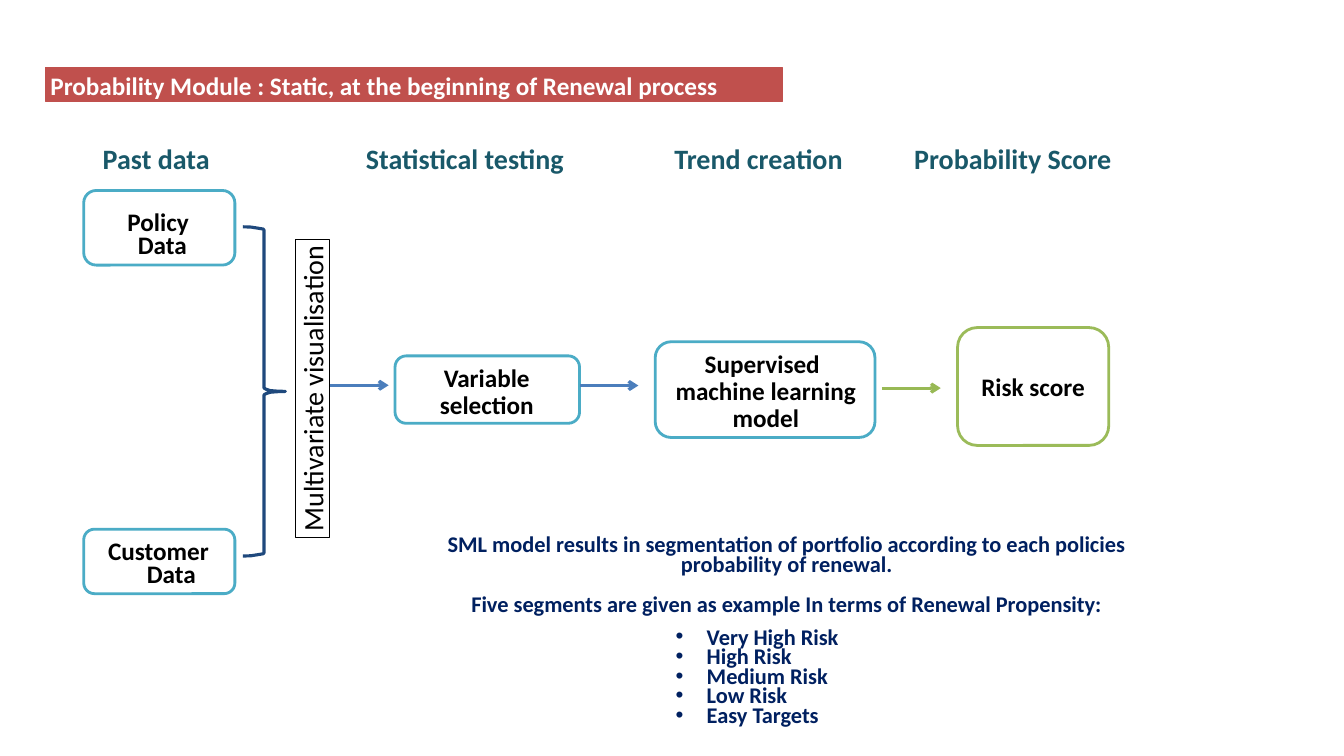
from lxml.etree import SubElement
from pptx import Presentation
from pptx.dml.color import RGBColor
from pptx.enum.shapes import MSO_CONNECTOR as CONNECTOR, MSO_SHAPE as SHAPE
from pptx.enum.text import MSO_ANCHOR as ANCHOR, MSO_AUTO_SIZE as AUTO_SIZE, PP_ALIGN as ALIGN
from pptx.oxml.ns import qn
from pptx.util import Pt

TEAL, BLACK, NAVY, RED, WHITE = "195869", "000000", "002060", "C0504D", "FFFFFF"
AQUA, GREEN = "4BACC6", "9BBB59"


def write(shape, lines, size, color, bold=True, align=ALIGN.LEFT, top=0, spacing=None,
          left=0, right=0, hanging=0, bullet=None, anchor=ANCHOR.TOP):
    """Fill a shape with paragraphs; all measures are in points."""
    frame = shape.text_frame
    frame.auto_size = AUTO_SIZE.NONE
    frame.word_wrap = True
    frame.vertical_anchor = anchor
    frame.margin_left = frame.margin_right = frame.margin_bottom = 0
    frame.margin_top = Pt(top)
    for number, line in enumerate(lines):
        para = frame.paragraphs[0] if number == 0 else frame.add_paragraph()
        para.text = line
        para.alignment = align
        para.space_before = Pt(0)
        if spacing:
            para.line_spacing = Pt(spacing)
        properties = para._p.get_or_add_pPr()
        properties.set("marL", str(Pt(left)))
        properties.set("marR", str(Pt(right)))
        properties.set("indent", str(Pt(hanging)))
        if bullet:
            SubElement(properties, qn("a:buChar"), char=bullet)
        para.font.name = "Calibri"
        para.font.size = Pt(size)
        para.font.bold = bold
        para.font.color.rgb = RGBColor.from_string(color)


def outline(shape, color, width):
    shape.line.color.rgb = RGBColor.from_string(color)
    shape.line.width = Pt(width)


deck = Presentation()
deck.slide_width, deck.slide_height = Pt(960), Pt(540)
page = deck.slides.add_slide(deck.slide_layouts[1])
shapes = page.shapes

# Title bar
title = shapes.title
title.left, title.top, title.width, title.height = Pt(32.4), Pt(48.2), Pt(526.3), Pt(24)
title.fill.solid()
title.fill.fore_color.rgb = RGBColor.from_string(RED)
outline(title, RED, 0.5)
write(title, ["Probability Module : Static, at the beginning of Renewal process"],
      18, WHITE, top=2.2, left=3.6)

# Column headings
for heading, left, width in [
    ("Past data", 73.4, 80),
    ("Statistical testing", 261.4, 148),
    ("Trend creation", 481.7, 124),
    ("Probability Score", 653, 182),
]:
    box = shapes.add_textbox(Pt(left), Pt(100.8), Pt(width), Pt(24.5))
    write(box, [heading], 20, TEAL)

# Process steps: place, outline, top inset, line spacing, left, right and first-line indents
for text, place, color, top, spacing, left, right, hanging in [
    ("Policy Data", (59.8, 136.1, 108, 53.3), AQUA, 13, 17, 28.8, 24.5, -6),
    ("Customer Data", (59.8, 378, 108, 46.1), AQUA, 6.5, 17, 28.8, 11.5, -18.5),
    ("Variable selection", (282.2, 254.2, 131.8, 48.2), AQUA, 5, 19, 25.9, 26.6, 0),
    ("Supervised machine learning model", (468, 244.1, 157, 68.4), AQUA, 4.3, 19, 9, 8, -5),
    ("Risk score", (684, 234, 108, 84.2), GREEN, 0, None, 0, 0, 0),
]:
    step = shapes.add_shape(SHAPE.ROUNDED_RECTANGLE, *map(Pt, place))
    step.shadow.inherit = False
    step.fill.background()
    outline(step, color, 2)
    write(step, [text], 18, BLACK, align=ALIGN.CENTER, top=top, spacing=spacing, left=left,
          right=right, hanging=hanging, anchor=ANCHOR.TOP if spacing else ANCHOR.MIDDLE)

# Upright visualisation label, kept on one line
label = shapes.add_shape(SHAPE.RECTANGLE, Pt(211), Pt(171), Pt(24.5), Pt(213.1))
label.shadow.inherit = False
label.fill.background()
outline(label, BLACK, 1)
write(label, ["Multivariate visualisation"], 20, BLACK, bold=False, align=ALIGN.CENTER)
label.text_frame.word_wrap = False
label.text_frame._txBody.bodyPr.set("vert", "vert270")

# Brace joining the two data sources; its lower half mirrors the upper one
brace_middle = 279.6
upper_half = [(173.5, 162), (179.3, 162.2), (184.3, 163), (187.9, 163.6), (188.6, 164.3),
              (188.6, 277.2), (190, 278), (193, 279), (198, 279.4), (203.8, brace_middle)]
lower_half = [(x, 2 * brace_middle - y) for x, y in reversed(upper_half[:-1])]
points = [(Pt(x), Pt(y)) for x, y in upper_half + lower_half]
builder = shapes.build_freeform(*points[0])
builder.add_line_segments(points[1:], close=False)
brace = builder.convert_to_shape()
brace.shadow.inherit = False
brace.fill.background()
outline(brace, "1F497D", 2.25)

# Arrows between steps
for left, y, color in [(235.6, 275.2, "4B7EBC"), (414, 275.4, "4B7EBC"), (630, 277.2, "98B955")]:
    arrow = shapes.add_connector(CONNECTOR.STRAIGHT, Pt(left), Pt(y), Pt(left + 42), Pt(y))
    outline(arrow, color, 2.25)
    SubElement(arrow.line._get_or_add_ln(), qn("a:tailEnd"), type="arrow")
    SubElement(arrow._element.spPr, qn("a:effectLst"))

# Segmentation note and its list
note = shapes.add_textbox(Pt(299.5), Pt(383.8), Pt(524.9), Pt(56.9))
write(note, [
    "SML model results in segmentation of portfolio according to each policies "
    "probability of renewal.",
    "Five segments are given as example In terms of Renewal Propensity:",
], 16, NAVY, align=ALIGN.CENTER, spacing=14.2)
note.text_frame.paragraphs[1].space_before = Pt(14.2)

segments = page.placeholders[1]
segments.left, segments.top, segments.width, segments.height = Pt(481), Pt(450), Pt(171.4), Pt(71.3)
write(segments, ["Very High Risk", "High Risk", "Medium Risk", "Low Risk", "Easy Targets"],
      16, NAVY, spacing=14, left=23.8, hanging=-22.3, bullet="•")

deck.save("out.pptx")
